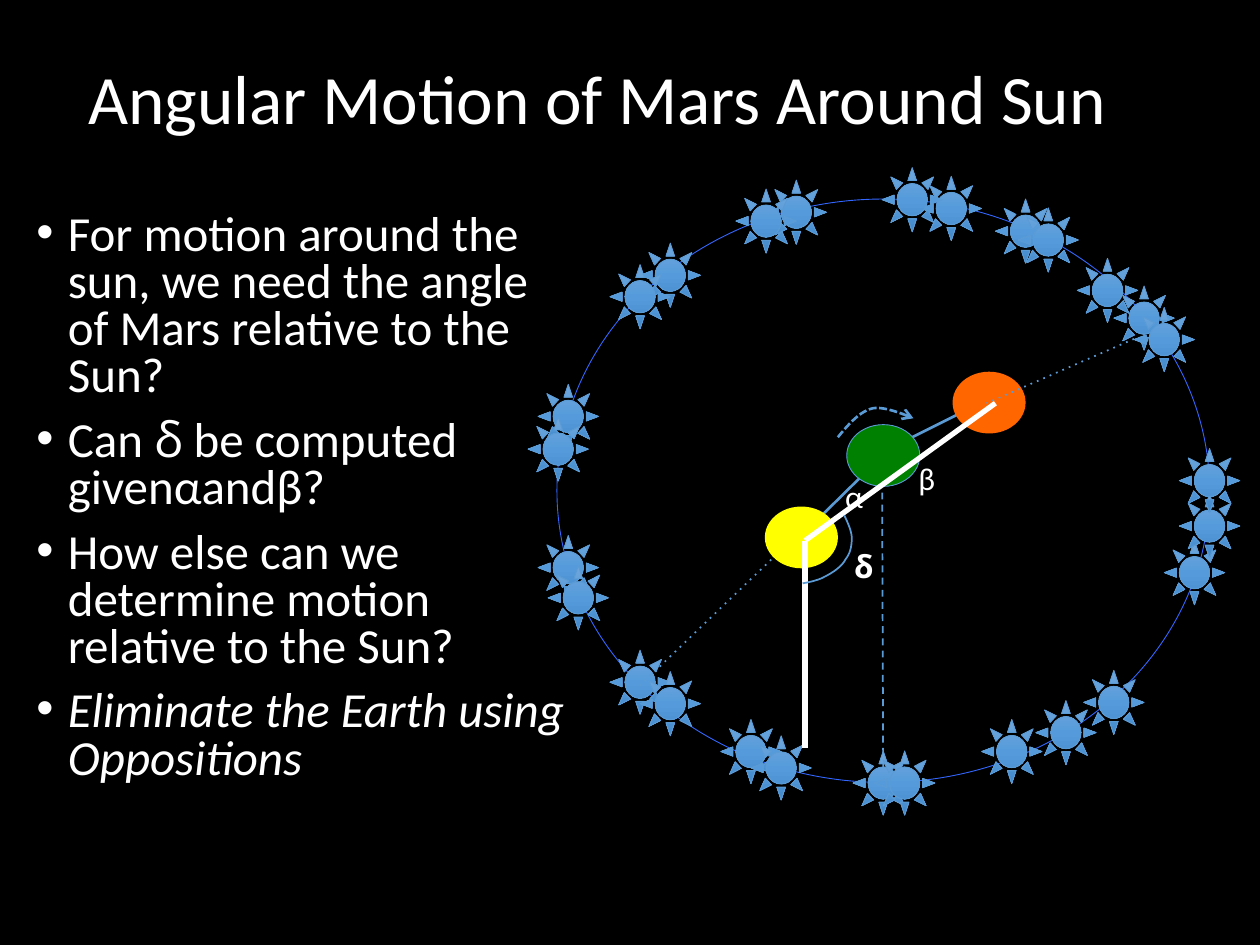
import collections

import copy
import lxml.etree
import pptx
import pptx.dml.color
import pptx.enum.shapes
import pptx.enum.text
import pptx.oxml.ns
import pptx.util

Box = collections.namedtuple("Box", "left top width height")
COLUMNS, ROWS = 100, 75
CELL = pptx.util.Inches(0.1)
SHAPES = pptx.enum.shapes.MSO_SHAPE
WHITE, BLUE = "FFFFFF", "5B9BD5"
BODY_FONT, GREEK_FONT = "Calibri", "Open Sans"
SUN_STOPS = ["71A6DB", "559BDB", "448ACA"]

BULLETS = [
    [("For motion around the sun, we need the angle of Mars relative to the Sun?", BODY_FONT, False)],
    [("Can ", BODY_FONT, False), ("δ", GREEK_FONT, False),
     (" be computed givenαandβ?", BODY_FONT, False)],
    [("How else can we determine motion relative to the Sun?", BODY_FONT, False)],
    [("Eliminate the Earth using Oppositions", BODY_FONT, True)],
]
STARS = [
    (44, 40.2), (40.2, 42.6), (35.9, 44.1), (50.4, 29.9), (51.6, 26.2), (51.6, 22.6),
    (43.5, 7.5), (46.4, 9.7), (48, 11.4), (31.1, 1), (28, 0.3), (37, 2.8), (38.8, 3.5),
    (25.7, 46.6), (27.4, 46.6), (18.8, 1.3), (16.4, 2), (8.8, 6.3), (6.4, 8),
    (0.7, 17.5), (-0.1, 20.1), (0.7, 29.5), (1.5, 31.9), (6.4, 38.6), (8.8, 40.3),
    (15.2, 44.1), (17.6, 45.4),
]
MOTION_ARC = [(24.5, 21.7), (25.4, 20.6), (26.3, 19.6), (27.3, 19.4),
              (28.3, 19.2), (30.5, 20.2), (30.5, 20.2)]
DELTA_ARC = [(25, 27.9), (25.3, 28.5), (25.6, 29.2), (25.6, 29.7), (25.6, 30.3),
             (25.5, 30.9), (25.1, 31.4), (24.8, 32), (24, 32.5), (23.4, 32.8),
             (22.9, 33.1), (21.7, 33.3), (21.7, 33.3)]


def cells(*lengths):
    """Turn grid lengths into slide units."""
    return [round(length * CELL) for length in lengths]


def shifted(box, point):
    """Return a point of the box in slide units."""
    return cells(box.left + point[0], box.top + point[1])


def colour(hex_code):
    """Read a colour from a hex string."""
    return pptx.dml.color.RGBColor.from_string(hex_code)


def add_run(paragraph, words, size, font=BODY_FONT, bold=False, italic=False):
    """Append one white run to a paragraph."""
    run = paragraph.add_run()
    run.text = words
    run.font.name, run.font.size = font, pptx.util.Pt(size)
    run.font.bold, run.font.italic = bold, italic
    run.font.color.rgb = colour(WHITE)


def stroke(item, hex_code, width, dash=None, arrow=False):
    """Give a shape or connector its line."""
    item.line.color.rgb = colour(hex_code)
    item.line.width = pptx.util.Pt(width)
    ln = item.line._get_or_add_ln()
    for tag, key, value in [("a:prstDash", "val", dash), ("a:tailEnd", "type", arrow and "arrow")]:
        if value:
            lxml.etree.SubElement(ln, pptx.oxml.ns.qn(tag)).set(key, value)


def add_line(slide, box, start, end, hex_code, width, dash=None):
    """Draw a straight line between two points of the box."""
    line = slide.shapes.add_connector(pptx.enum.shapes.MSO_CONNECTOR.STRAIGHT,
                                      *shifted(box, start), *shifted(box, end))
    stroke(line, hex_code, width, dash)
    lxml.etree.SubElement(line._element.spPr, pptx.oxml.ns.qn("a:effectLst"))


def add_body(slide, box, preset, corner, size, fill=None, outline=None):
    """Place a preset shape with an optional fill and outline."""
    body = slide.shapes.add_shape(preset, *shifted(box, corner), *cells(*size))
    body.shadow.inherit = False
    if fill:
        body.fill.solid()
        body.fill.fore_color.rgb = colour(fill)
    else:
        body.fill.background()
    if outline:
        stroke(body, outline, 0.5)
    else:
        body.line.fill.background()
    return body


def add_star(slide, box, corner):
    """Place one sun shape with its shaded fill."""
    star = add_body(slide, box, SHAPES.SUN, corner, (4.8, 5.1), outline=BLUE)
    star.fill.gradient()
    star.fill.gradient_angle = 270
    stops = star._element.spPr.find(".//" + pptx.oxml.ns.qn("a:gsLst"))
    stops.insert(1, copy.deepcopy(stops[0]))
    for index, (stop, hex_code) in enumerate(zip(star.fill.gradient_stops, SUN_STOPS)):
        stop.position = index / 2
        stop.color.rgb = colour(hex_code)


def bezier(points, steps=12):
    """Sample a chain of cubic curves."""
    samples = [points[0]]
    for first in range(0, len(points) - 1, 3):
        controls = points[first:first + 4]
        for step in range(1, steps + 1):
            t = step / steps
            weights = [(1 - t) ** 3, 3 * t * (1 - t) ** 2, 3 * t * t * (1 - t), t ** 3]
            samples.append(tuple(sum(w * p[axis] for w, p in zip(weights, controls))
                                 for axis in (0, 1)))
    return samples


def add_arc(slide, box, points, width, dash=None, arrow=False):
    """Draw an open curve through the box."""
    start, *rest = [shifted(box, point) for point in bezier(points)]
    builder = slide.shapes.build_freeform(*start)
    builder.add_line_segments(rest, close=False)
    arc = builder.convert_to_shape()
    arc.shadow.inherit = False
    arc.fill.background()
    stroke(arc, BLUE, width, dash, arrow)


def add_label(slide, box, letter, corner, width, font=BODY_FONT, bold=False):
    """Write the letter of an angle."""
    label = slide.shapes.add_textbox(*shifted(box, corner), *cells(width, 4)).text_frame
    label.word_wrap = False
    label.auto_size = pptx.enum.text.MSO_AUTO_SIZE.SHAPE_TO_FIT_TEXT
    add_run(label.paragraphs[0], letter, 18, font, bold)


def place_title(slide, box):
    """Set the heading in its placeholder."""
    title = slide.shapes.title
    title.left, title.top, title.width, title.height = cells(*box)
    heading = title.text_frame
    heading.auto_size = pptx.enum.text.MSO_AUTO_SIZE.NONE
    heading.vertical_anchor = pptx.enum.text.MSO_ANCHOR.MIDDLE
    line = heading.paragraphs[0]
    line.alignment = pptx.enum.text.PP_ALIGN.LEFT
    line.line_spacing = 0.9
    add_run(line, "Angular Motion of Mars Around Sun", 39.6)


def place_questions(slide, box):
    """List the bulleted questions."""
    questions = slide.shapes.add_textbox(*cells(*box)).text_frame
    questions.word_wrap = True
    for index, runs in enumerate(BULLETS):
        question = questions.add_paragraph() if index else questions.paragraphs[0]
        question.line_spacing = 0.8
        question.space_before = pptx.util.Pt(10)
        properties = question._p.get_or_add_pPr()
        indent = cells(2.5)[0]
        properties.set("marL", str(indent))
        properties.set("indent", str(-indent))
        for tag, key, value in [("a:buFont", "typeface", "Arial"), ("a:buChar", "char", "•")]:
            lxml.etree.SubElement(properties, pptx.oxml.ns.qn(tag)).set(key, value)
        for words, font, italic in runs:
            add_run(question, words, 28, font, italic=italic)


def place_orbit(slide, box):
    """Draw the Sun, Earth and Mars inside the ring of stars."""
    planet = (5.8, 4.9)
    earth, sun = (28, 23.2), (21.9, 29.9)
    add_line(slide, box, earth, (21.2, 29.9), BLUE, 1.5)
    add_line(slide, box, (27.4, 23.2), (35, 19.4), BLUE, 1.5)
    add_body(slide, box, SHAPES.OVAL, (33.6, 16.5), planet, "FF6600")
    add_arc(slide, box, MOTION_ARC, 1.5, "sysDash", True)
    add_body(slide, box, SHAPES.OVAL, (2.2, 2.8), (51.8, 46.3), outline="3366FF")
    add_line(slide, box, earth, (28.1, 49.1), BLUE, 1, "dash")
    for corner in STARS:
        add_star(slide, box, corner)
    add_body(slide, box, SHAPES.OVAL, (25.2, 20.7), planet, "008000", BLUE)
    add_label(slide, box, "α", (24.1, 24.4), 4.5)
    add_label(slide, box, "β", (29.9, 22.9), 4.5)
    add_line(slide, box, (21.2, 29.5), (8.8, 41.4), BLUE, 1, "dot")
    add_body(slide, box, SHAPES.OVAL, (18.7, 27.2), planet, "FFFF00")
    add_line(slide, box, (48, 13.9), (36.3, 19), BLUE, 1, "dot")
    for end in [(21.9, 46.4), (37, 19)]:
        add_line(slide, box, sun, end, WHITE, 3)
    add_arc(slide, box, DELTA_ARC, 1)
    add_label(slide, box, "δ", (24.8, 29.9), 3.6, GREEK_FONT, True)


def main():
    """Build and save the slide."""
    deck = pptx.Presentation()
    deck.slide_width, deck.slide_height = cells(COLUMNS, ROWS)
    slide = deck.slides.add_slide(deck.slide_layouts[5])
    slide.background.fill.solid()
    slide.background.fill.fore_color.rgb = colour("000000")
    place_title(slide, Box(6, 1.2, 88, 13.8))
    place_questions(slide, Box(1.9, 16.5, 44.8, 47.5))
    place_orbit(slide, Box(42, 13, 57, 52))
    deck.save("out.pptx")


if __name__ == "__main__":
    main()
